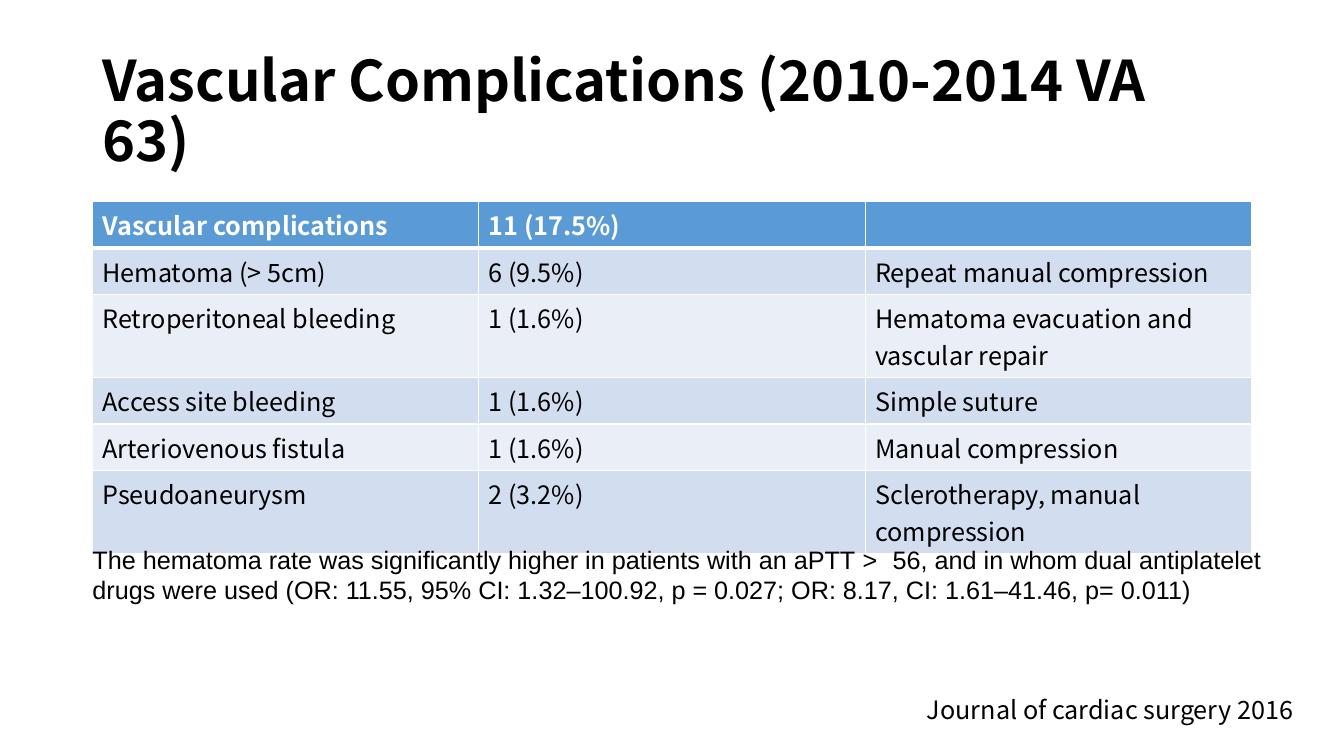
from pptx import Presentation
from pptx.dml.color import RGBColor
from pptx.enum.text import MSO_ANCHOR, MSO_AUTO_SIZE
from pptx.oxml import parse_xml
from pptx.oxml.ns import nsdecls
from pptx.util import Pt

SANS = "Noto Sans CJK KR"
BLACK, WHITE = "000000", "FFFFFF"
HEAD, BANDS = "5B9BD5", ("D2DEEF", "EAEFF7")
ROWS = [
    ("Vascular complications", "11 (17.5%)", ""),
    ("Hematoma (> 5cm)", "6 (9.5%)", "Repeat manual compression"),
    ("Retroperitoneal bleeding", "1 (1.6%)",
     "Hematoma evacuation and vascular repair"),
    ("Access site bleeding", "1 (1.6%)", "Simple suture"),
    ("Arteriovenous fistula", "1 (1.6%)", "Manual compression"),
    ("Pseudoaneurysm", "2 (3.2%)", "Sclerotherapy, manual compression"),
]
NOTE = [
    ("The hematoma rate was significantly higher in patients with an aPTT ",
     "Arial"),
    ("> ", "Courier New"),
    ("56, and in whom dual antiplatelet drugs were used (OR: 11.55, "
     "95% CI: 1.32–100.92, p = 0.027; OR: 8.17, CI: 1.61–41.46, p= 0.011)",
     "Arial"),
]


def color(code):
    return RGBColor.from_string(code)


def write(frame, runs, size=18, fill=BLACK, bold=False, space=None):
    """Fill a frame's first paragraph with (text, font) runs."""
    para = frame.paragraphs[0]
    para.line_spacing = space
    para.font.size = Pt(size)
    for text, face in runs:
        run = para.add_run()
        run.text = text
        font = run.font
        font.name, font.size, font.bold = face, Pt(size), bold
        font.color.rgb = color(fill)


def add_text(slide, box, runs, wrap=True, anchor=MSO_ANCHOR.TOP,
             fit=MSO_AUTO_SIZE.SHAPE_TO_FIT_TEXT, **style):
    frame = slide.shapes.add_textbox(*map(Pt, box)).text_frame
    frame.word_wrap = wrap
    frame.auto_size = fit
    frame.vertical_anchor = anchor
    write(frame, runs, **style)


def add_edges(cell, widths):
    """Draw white cell borders: left, right, top, bottom."""
    props = cell._tc.get_or_add_tcPr()
    for side, width in zip("LRTB", widths):
        props.append(parse_xml(
            f'<a:ln{side} {nsdecls("a")} w="{Pt(width)}"><a:solidFill>'
            f'<a:srgbClr val="{WHITE}"/></a:solidFill></a:ln{side}>'))


def add_grid(slide, box, rows):
    frame = slide.shapes.add_table(len(rows), len(rows[0]), *map(Pt, box))
    for i, row in enumerate(rows):
        top = i == 0
        for j, text in enumerate(row):
            cell = frame.table.cell(i, j)
            add_edges(cell, (1, 1, 3 if i == 1 else 1, 3 if top else 1))
            cell.fill.solid()
            cell.fill.fore_color.rgb = color(HEAD if top else BANDS[(i - 1) % 2])
            write(cell.text_frame, [(text, SANS)] if text else [],
                  fill=WHITE if top else BLACK, bold=top)


def main():
    deck = Presentation()
    deck.slide_width, deck.slide_height = Pt(960), Pt(540)
    slide = deck.slides.add_slide(deck.slide_layouts[6])

    # Title
    add_text(slide, (66, 28.75, 828, 104.4),
             [("Vascular Complications (2010-2014 VA 63)\u00a0", SANS)],
             anchor=MSO_ANCHOR.MIDDLE, fit=MSO_AUTO_SIZE.NONE,
             size=40, bold=True, space=0.9)

    # Table of complications and treatments
    add_grid(slide, (66, 143.75, 828, 175.2), ROWS)

    # Journal and finding
    add_text(slide, (655, 492.4, 283.5, 29), [("Journal of cardiac surgery 2016", SANS)],
             wrap=False)
    add_text(slide, (59, 385.2, 859, 51), NOTE)

    deck.save("out.pptx")


if __name__ == "__main__":
    main()
